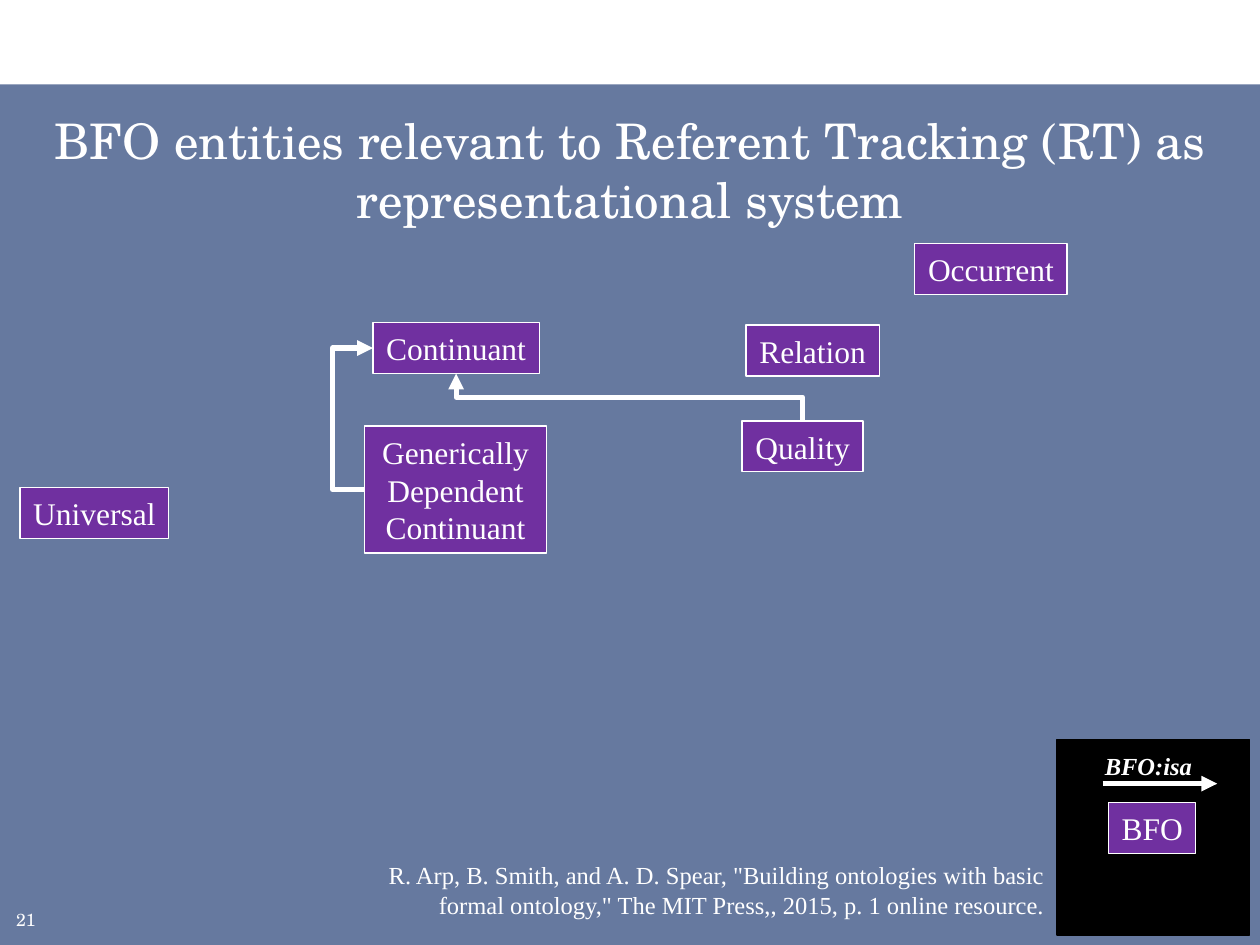
from collections import namedtuple
from dataclasses import dataclass
from lxml.etree import SubElement
from pptx import Presentation
from pptx.dml.color import RGBColor
from pptx.enum.shapes import MSO_CONNECTOR, MSO_SHAPE
from pptx.enum.text import MSO_ANCHOR, MSO_AUTO_SIZE, PP_ALIGN
from pptx.oxml.ns import qn
from pptx.util import Inches, Pt

COLS, ROWS = 100, 75
CELL = Inches(10) // COLS
TOP, LEFT, BOTTOM = 0, 1, 2

Box = namedtuple("Box", "x y w h")


@dataclass(frozen=True)
class Theme:
    white: RGBColor = RGBColor(0xFF, 0xFF, 0xFF)
    navy: RGBColor = RGBColor(0x00, 0x20, 0x60)
    violet: RGBColor = RGBColor(0x70, 0x30, 0xA0)
    black: RGBColor = RGBColor(0, 0, 0)
    head: str = "TeX Gyre Schola"
    body: str = "Times New Roman"
    title: int = 28
    node: int = 18
    note: int = 14
    page: int = 10
    edge: float = 0.75
    arrow: int = 3


THEME = Theme()


def part(area, x, y, w, h):
    """Shift a box from its region's grid to the slide's grid."""
    return Box(area.x + x, area.y + y, w, h)


def emu(box):
    return [round(n * CELL) for n in box]


def write(frame, text, size, font, align=PP_ALIGN.LEFT, wrap=True,
          anchor=MSO_ANCHOR.TOP, bold=None, italic=None):
    frame.word_wrap = wrap
    frame.auto_size = MSO_AUTO_SIZE.NONE
    frame.vertical_anchor = anchor
    para = frame.paragraphs[0]
    para.alignment = align
    run = para.add_run()
    run.text = text
    run.font.size, run.font.name = Pt(size), font
    run.font.bold, run.font.italic = bold, italic
    run.font.color.rgb = THEME.white


def panel(slide, box, fill, edge=None):
    shape = slide.shapes.add_shape(MSO_SHAPE.RECTANGLE, *emu(box))
    shape.shadow.inherit = False
    shape.fill.solid()
    shape.fill.fore_color.rgb = fill
    if edge is None:
        shape.line.fill.background()
    else:
        shape.line.color.rgb = edge
        shape.line.width = Pt(THEME.edge)
    return shape


def node(slide, box, text, wrap=False):
    shape = panel(slide, box, THEME.violet, THEME.white)
    write(shape.text_frame, text, THEME.node, THEME.body, PP_ALIGN.CENTER,
          wrap, MSO_ANCHOR.MIDDLE)
    return shape


def label(slide, box, text, size, font, **style):
    shape = slide.shapes.add_textbox(*emu(box))
    write(shape.text_frame, text, size, font, **style)


def arrow(slide, kind, ends=(0, 0, 0, 0)):
    line = slide.shapes.add_connector(kind, *emu(ends))
    line.line.color.rgb = THEME.white
    line.line.width = Pt(THEME.arrow)
    SubElement(line.line._get_or_add_ln(), qn("a:tailEnd"), type="triangle")
    SubElement(line._element.spPr, qn("a:effectLst"))
    return line


def elbow(slide, start, side, end, goal):
    line = arrow(slide, MSO_CONNECTOR.ELBOW)
    line.begin_connect(start, side)
    line.end_connect(end, goal)
    return line


def bend(line, share):
    """Set where the elbow turns, as a share of its run."""
    guides = line._element.spPr.find(qn("a:prstGeom")).get_or_add_avLst()
    SubElement(guides, qn("a:gd"), name="adj1",
               fmla=f"val {round(share * 100000)}")


def upright(line):
    """Turn an elbow so that it leaves upwards and heads left."""
    wide, tall = line.width, line.height
    midx, midy = line.left + wide // 2, line.top + tall // 2
    line.left, line.top = midx - tall // 2, midy - wide // 2
    line.width, line.height = tall, wide
    frame = line._element.spPr.find(qn("a:xfrm"))
    frame.attrib.pop("flipH", None)
    frame.set("rot", str(270 * 60000))
    frame.set("flipV", "1")


def backdrop(slide, area):
    band = panel(slide, area, THEME.navy)
    color = band.fill._xPr.find(qn("a:solidFill"))[0]
    SubElement(color, qn("a:alpha"), val="60000")
    slide.shapes._spTree.insert(2, band._element)


def heading(slide, area, text):
    title = slide.shapes.title
    title.left, title.top, title.width, title.height = emu(area)
    write(title.text_frame, text, THEME.title, THEME.head, PP_ALIGN.CENTER)


def diagram(slide, area):
    high = 4.05
    places = {
        "Universal": (1.6, 19.4, 11.8),
        "Relation": (59.2, 6.5, 10.6),
        "Continuant": (29.6, 6.3, 13.2),
        "Quality": (58.9, 14.1, 9.6),
        "Occurrent": (72.6, 0, 12.1),
    }
    nodes = {name: node(slide, part(area, *place, high), name)
             for name, place in places.items()}
    generic = node(slide, part(area, 28.9, 14.5, 14.5, 10.1),
                   "Generically Dependent Continuant", True)
    parent = nodes["Continuant"]
    upright(elbow(slide, nodes["Quality"], TOP, parent, BOTTOM))
    side = elbow(slide, generic, LEFT, parent, LEFT)
    bend(side, -2.5 * CELL / side.width)


def legend(slide, area):
    panel(slide, area, THEME.black, THEME.black)
    x, y = area.x + 3.6, area.y + 3.5
    arrow(slide, MSO_CONNECTOR.STRAIGHT, (x, y, x + 9.1, y))
    label(slide, part(area, 2.8, 0.4, 9, 3.4), "BFO:isa", THEME.note,
          THEME.body, wrap=False, bold=True, italic=True)
    node(slide, part(area, 4.1, 5, 6.9, 4.05), "BFO")


def footer(slide, area):
    label(slide, part(area, 0.3, 3.9, 3.9, 2.5), "21", THEME.page, THEME.head,
          anchor=MSO_ANCHOR.MIDDLE)
    label(slide, part(area, 26.4, 0, 57.5, 5.7),
          'R. Arp, B. Smith, and A. D. Spear, "Building ontologies with basic '
          'formal ontology," The MIT Press,, 2015, p. 1 online resource.',
          THEME.note, THEME.body, align=PP_ALIGN.RIGHT)


def main():
    deck = Presentation()
    deck.slide_width, deck.slide_height = COLS * CELL, ROWS * CELL
    slide = deck.slides.add_slide(deck.slide_layouts[5])
    backdrop(slide, Box(0, 6.7, COLS, ROWS - 6.7))
    heading(slide, Box(0, 8.3, COLS, 8.3),
            "BFO entities relevant to Referent Tracking (RT) as "
            "representational system")
    diagram(slide, Box(0, 19.3, COLS, 25))
    legend(slide, Box(83.9, 58.7, 15.3, 15.5))
    footer(slide, Box(0, 67.8, COLS, 7.2))
    deck.save("out.pptx")


if __name__ == "__main__":
    main()
